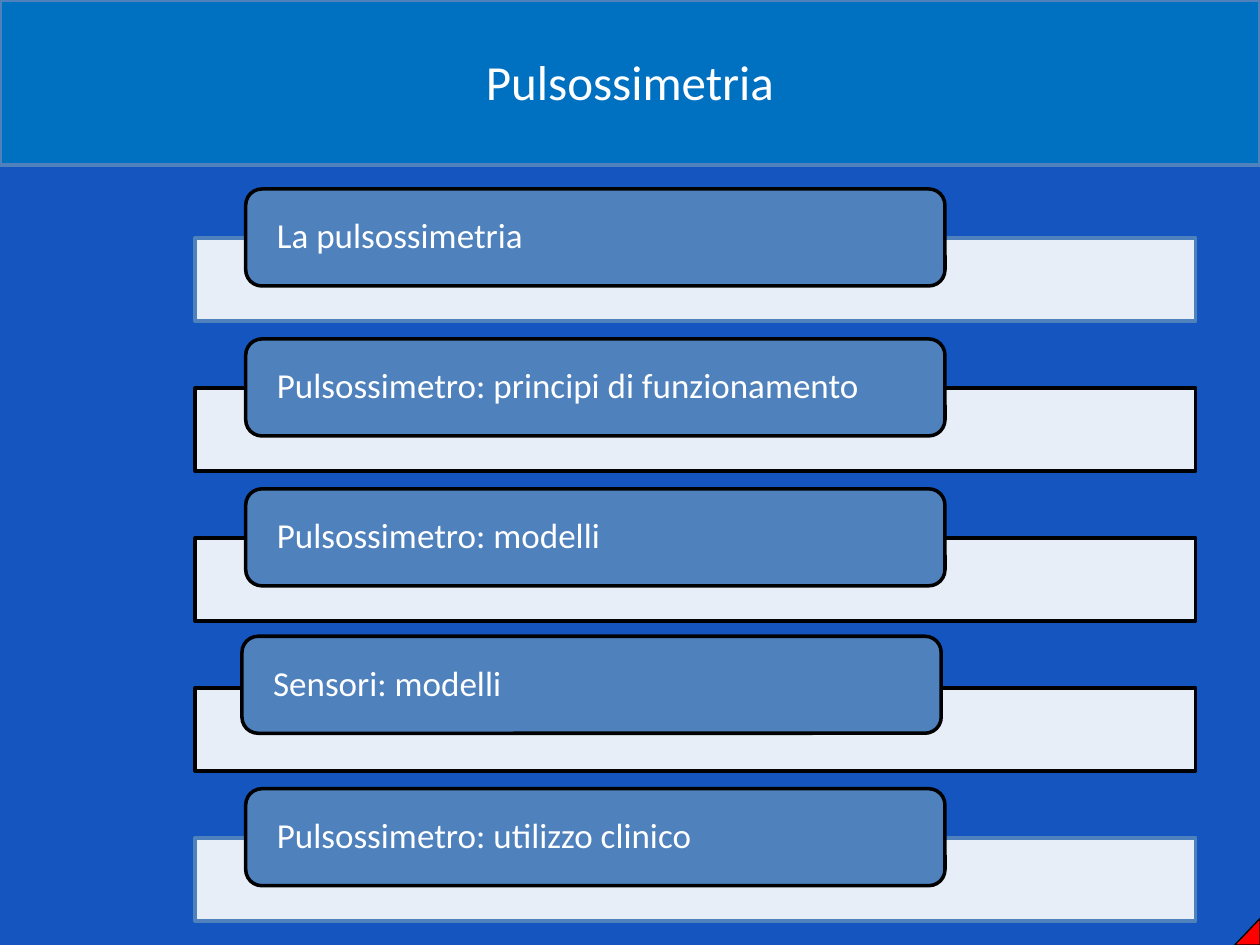
import pptx
import pptx.dml.color
import pptx.enum.shapes
import pptx.enum.text
import pptx.util
from lxml import etree
from pptx.oxml.ns import qn

Inches = pptx.util.Inches
Pt = pptx.util.Pt
RGBColor = pptx.dml.color.RGBColor
MSO_SHAPE = pptx.enum.shapes.MSO_SHAPE
PP_ALIGN = pptx.enum.text.PP_ALIGN
MSO_ANCHOR = pptx.enum.text.MSO_ANCHOR

BACKGROUND = RGBColor(0x14, 0x55, 0xC0)
HEADER = RGBColor(0x00, 0x70, 0xC0)
STEEL = RGBColor(0x4F, 0x81, 0xBD)
WHITE = RGBColor(0xFF, 0xFF, 0xFF)
BLACK = RGBColor(0x00, 0x00, 0x00)
RED = RGBColor(0xFF, 0x00, 0x00)

FIRST_TOP = 1.5
ROW_STEP = 1.19
# Topic, outline of its bar, shift of its label from the grid
TOPICS = [
    ("La pulsossimetria", STEEL, (0, 0)),
    ("Pulsossimetro: principi di funzionamento", BLACK, (0, 0)),
    ("Pulsossimetro: modelli", BLACK, (0, 0)),
    ("Sensori: modelli", BLACK, (-0.03, -0.02)),
    ("Pulsossimetro: utilizzo clinico", STEEL, (0, 0)),
]


def set_format(target, values):
    for name, value in values.items():
        setattr(target, name, value)


def add_box(slide, kind, bounds, fill, line, line_width=2):
    box = slide.shapes.add_shape(kind, *map(Inches, bounds))
    box.shadow.inherit = False
    box.fill.solid()
    box.fill.fore_color.rgb = fill
    box.line.color.rgb = line
    box.line.width = Pt(line_width)
    return box


def set_opacity(box, percent):
    color = box.element.spPr.find(qn("a:solidFill"))[0]
    etree.SubElement(color, qn("a:alpha"), val=str(percent * 1000))


def write_text(box, text, size, frame_format, para_format):
    frame = box.text_frame
    set_format(frame, {"word_wrap": True, **frame_format})
    para = frame.paragraphs[0]
    set_format(para, para_format)
    span = para.add_run()
    span.text = text
    set_format(span.font, {"name": "Calibri", "size": Pt(size)})
    span.font.color.rgb = WHITE


def add_header(slide):
    band = add_box(slide, MSO_SHAPE.RECTANGLE, (0, 0, 10, 1.31), HEADER, STEEL)
    title = slide.shapes.title
    set_format(title, {"left": Inches(0), "top": Inches(0.36),
                       "width": Inches(10), "height": Inches(0.57)})
    write_text(title, "Pulsossimetria", 28,
               {"vertical_anchor": MSO_ANCHOR.TOP,
                "auto_size": pptx.enum.text.MSO_AUTO_SIZE.SHAPE_TO_FIT_TEXT},
               {"alignment": PP_ALIGN.CENTER})
    band.element.addnext(title.element)  # the title goes in front of its band


def add_topic(slide, top, text, bar_line, shift):
    bar = add_box(slide, MSO_SHAPE.RECTANGLE, (1.55, top + 0.39, 7.94, 0.66),
                  WHITE, bar_line)
    set_opacity(bar, 90)
    label = add_box(slide, MSO_SHAPE.ROUNDED_RECTANGLE,
                    (1.95 + shift[0], top + shift[1], 5.55, 0.77), STEEL, BLACK)
    write_text(label, text, 20,
               {"vertical_anchor": MSO_ANCHOR.MIDDLE,
                "margin_left": Inches(0.21), "margin_right": Inches(0.21),
                "margin_top": 0, "margin_bottom": 0},
               {"alignment": PP_ALIGN.LEFT, "line_spacing": 0.9})


def add_corner(slide):
    corner = add_box(slide, MSO_SHAPE.RIGHT_TRIANGLE, (9.8, 7.29, 0.2, 0.21),
                     RED, BLACK, 0.75)
    corner.element.spPr.find(qn("a:xfrm")).set("flipH", "1")


def main():
    deck = pptx.Presentation()
    set_format(deck, {"slide_width": Inches(10), "slide_height": Inches(7.5)})
    slide = deck.slides.add_slide(deck.slide_layouts.get_by_name("Title Only"))
    slide.background.fill.solid()
    slide.background.fill.fore_color.rgb = BACKGROUND
    add_header(slide)
    for row, (text, bar_line, shift) in enumerate(TOPICS):
        add_topic(slide, FIRST_TOP + row * ROW_STEP, text, bar_line, shift)
    add_corner(slide)
    deck.save("out.pptx")


if __name__ == "__main__":
    main()
